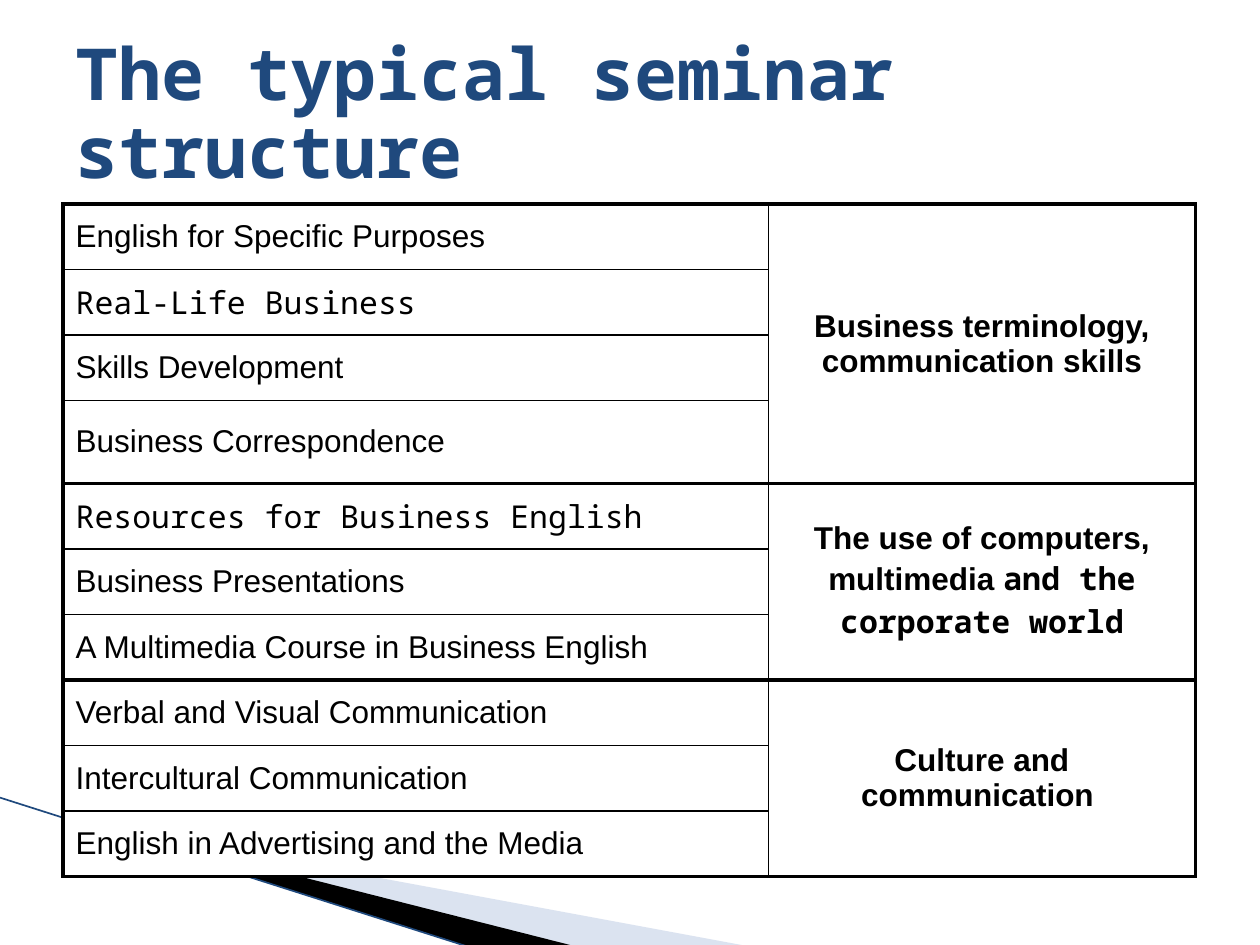
from dataclasses import dataclass

from lxml import etree
from pptx import Presentation
from pptx.dml.color import RGBColor
from pptx.enum.shapes import MSO_CONNECTOR
from pptx.enum.text import MSO_ANCHOR, PP_ALIGN
from pptx.oxml.ns import qn
from pptx.util import Cm, Pt

STRAIGHT = MSO_CONNECTOR.STRAIGHT
MIDDLE = MSO_ANCHOR.MIDDLE
LEFT, CENTER = PP_ALIGN.LEFT, PP_ALIGN.CENTER


@dataclass(frozen=True)
class Theme:
    """Colours, fonts, type sizes and line widths of the deck."""
    title: str = "1F497D"
    text: str = "000000"
    paper: str = "FFFFFF"
    pale: str = "A7B9DB"
    edge: str = "1F497D"
    sans: str = "Arial"
    mono: str = "Noto Sans Mono"
    title_size: float = 41
    body_size: float = 18
    thin: float = 1
    thick: float = 2.25
    hairline: float = 0.95


THEME = Theme()
SANS, MONO = THEME.sans, THEME.mono
GROUPS = [
    ([("English for Specific Purposes", SANS), ("Real-Life Business", MONO),
      ("Skills Development", SANS), ("Business Correspondence", SANS)],
     [("Business terminology, communication skills", SANS)]),
    ([("Resources for Business English", MONO), ("Business Presentations", SANS),
      ("A Multimedia Course in Business English", SANS)],
     [("The use of computers, multimedia ", SANS), ("and the corporate world", MONO)]),
    ([("Verbal and Visual Communication", SANS), ("Intercultural Communication", SANS),
      ("English in Advertising and the Media", SANS)],
     [("Culture and communication ", SANS)]),
]


def colour(value):
    """Turn a hex value into a colour."""
    return RGBColor.from_string(value)


def write(frame, spans, size, ink, bold=False, align=LEFT, spacing=1.0):
    """Fill the first paragraph of a text frame with (text, font) spans."""
    para = frame.paragraphs[0]
    para.alignment = align
    para.line_spacing = spacing
    for text, face in spans:
        span = para.add_run()
        span.text = text
        for key, value in {"name": face, "size": Pt(size), "bold": bold}.items():
            setattr(span.font, key, value)
        span.font.color.rgb = colour(ink)


def add_band(page, left, top, points, fill, alpha=None):
    """Draw a filled outline whose points are relative to left and top."""
    corners = [(Cm(left + x), Cm(top + y)) for x, y in points]
    builder = page.shapes.build_freeform(*corners[0], scale=1.0)
    builder.add_line_segments(corners[1:], close=True)
    band = builder.convert_to_shape()
    band.shadow.inherit = False
    band.line.fill.background()
    band.fill.solid()
    band.fill.fore_color.rgb = colour(fill)
    if alpha is not None:
        tint = band.fill._xPr.find(".//" + qn("a:srgbClr"))
        etree.SubElement(tint, qn("a:alpha"), val=str(alpha * 1000))


def add_swoosh(page, left, top, width, height):
    """Draw the slanting bands in the lower left corner."""
    add_band(page, left, top,
             [(1.4, 0.46), (width, height), (11.58, height), (1.4, 0.43)], THEME.pale, 40)
    add_band(page, left, top,
             [(1.35, 0.4), (11.61, height), (9.45, height), (1.37, 0.43)], THEME.text)
    edge = page.shapes.add_connector(
        STRAIGHT, Cm(left), Cm(top), Cm(left + 9.42), Cm(top + height))
    edge.line.color.rgb = colour(THEME.edge)
    edge.line.width = Pt(THEME.hairline)
    etree.SubElement(edge._element.spPr, qn("a:effectLst"))


def add_title(page, left, top, width, height):
    """Place the heading of the slide."""
    box = page.shapes.add_textbox(Cm(left), Cm(top), Cm(width), Cm(height))
    frame = box.text_frame
    frame.word_wrap = True
    frame.vertical_anchor = MIDDLE
    write(frame, [("The typical seminar structure", MONO)],
          THEME.title_size, THEME.title, bold=True, spacing=0.9)


def style_cell(cell, **widths):
    """Give a cell its fill, anchor and border widths by side."""
    cell.vertical_anchor = MIDDLE
    properties = cell._tc.get_or_add_tcPr()
    for side in ("L", "R", "T", "B"):
        border = etree.SubElement(properties, qn(f"a:ln{side}"), w=str(Pt(widths[side])))
        fill = etree.SubElement(border, qn("a:solidFill"))
        etree.SubElement(fill, qn("a:srgbClr"), val=THEME.text)
    cell.fill.solid()
    cell.fill.fore_color.rgb = colour(THEME.paper)


def add_structure(page, left, top, width, height):
    """Place the table of courses, with each group merged on the right."""
    count = sum(len(courses) for courses, topic in GROUPS)
    table = page.shapes.add_table(
        count, 2, Cm(left), Cm(top), Cm(width), Cm(height)).table
    table.first_row = table.horz_banding = False
    table.columns[0].width = Cm(14.22)
    table.columns[1].width = Cm(width - 14.22)
    row_height = 1.32
    for row in table.rows:
        row.height = Cm(row_height)
    table.rows[3].height = Cm(height - row_height * (count - 1))
    thin, thick = THEME.thin, THEME.thick
    start = 0
    for courses, topic in GROUPS:
        last = len(courses) - 1
        for index, course in enumerate(courses):
            above = thick if index == 0 else thin
            below = thick if index == last else thin
            cell = table.cell(start + index, 0)
            style_cell(cell, L=thick, R=thin, T=above, B=below)
            write(cell.text_frame, [course], THEME.body_size, THEME.text)
            style_cell(table.cell(start + index, 1), L=thin, R=thick, T=above,
                       B=thick if index == 0 else below)
        heading = table.cell(start, 1)
        heading.merge(table.cell(start + last, 1))
        write(heading.text_frame, topic, THEME.body_size, THEME.text,
              bold=True, align=CENTER)
        start += len(courses)


def main():
    """Build the deck and save it."""
    deck = Presentation()
    deck.slide_width, deck.slide_height = Cm(25.4), Cm(19.05)
    page = deck.slides.add_slide(deck.slide_layouts[6])
    add_swoosh(page, 0, 16.08, 15.11, 3)
    add_structure(page, 1.27, 4.11, 22.83, 13.56)
    add_title(page, 1.27, 0.76, 22.86, 3.18)
    deck.save("out.pptx")


if __name__ == "__main__":
    main()
